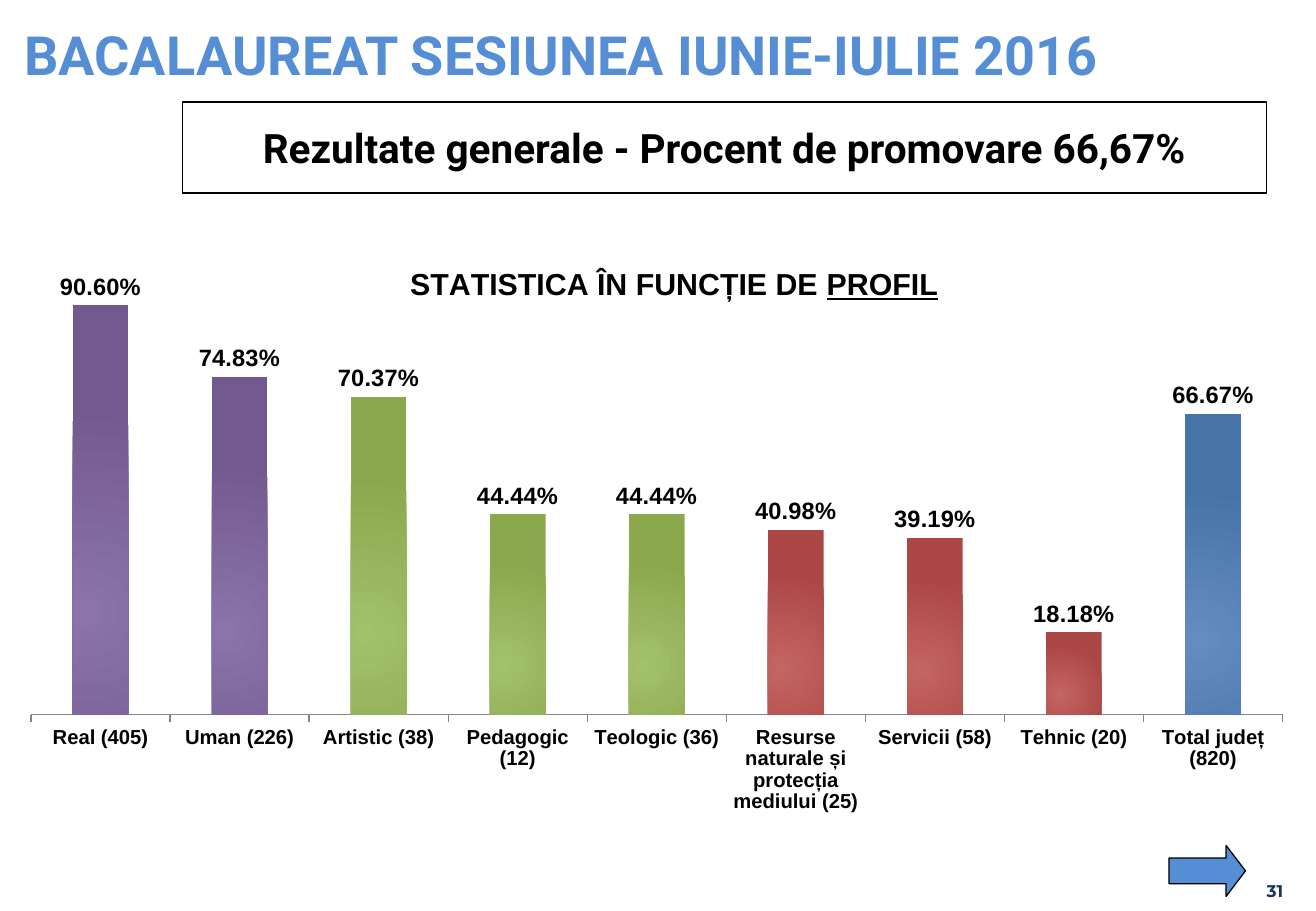
from lxml.etree import SubElement
from pptx import Presentation
from pptx.chart.data import CategoryChartData
from pptx.dml.color import RGBColor
from pptx.enum.chart import XL_CHART_TYPE, XL_LABEL_POSITION, XL_TICK_MARK
from pptx.enum.shapes import MSO_SHAPE
from pptx.enum.text import MSO_ANCHOR, MSO_AUTO_SIZE, PP_ALIGN
from pptx.oxml import parse_xml
from pptx.oxml.ns import nsdecls, qn
from pptx.util import Inches, Pt

TITLE = "BACALAUREAT SESIUNEA IUNIE-IULIE 2016"
BANNER = "Rezultate generale - Procent de promovare 66,67%"
HEADING = ("STATISTICA ÎN FUNCȚIE DE ", "PROFIL")
PAGE = "31"
# profile, pass rate, colour group
RATES = [
    ("Real (405)", 0.906, "purple"),
    ("Uman (226)", 0.7483, "purple"),
    ("Artistic (38)", 0.7037, "green"),
    ("Pedagogic (12)", 0.4444, "green"),
    ("Teologic (36)", 0.4444, "green"),
    ("Resurse naturale și protecția mediului (25)", 0.4098, "red"),
    ("Servicii (58)", 0.3919, "red"),
    ("Tehnic (20)", 0.1818, "red"),
    ("Total județ (820)", 0.6667, "blue"),
]
SHADES = {
    "purple": ("8B74A9", "725990"),
    "green": ("A3C06B", "8BA84D"),
    "red": ("C56562", "AB4744"),
    "blue": ("648CC2", "4673A8"),
}
COLORS = {"sky": "558ED5", "navy": "17365C", "black": "000000",
          "gray": "868686", "bar": "4F81BD"}


def rgb(name):
    return RGBColor.from_string(COLORS[name])


def box(left, top, width, height):
    return [Inches(n) for n in (left, top, width, height)]


def style(font, size, color="black", name="Arial"):
    font.size, font.name, font.bold = Pt(size), name, True
    font.color.rgb = rgb(color)


def write(shape, text, size, color, name, align, anchor, inset):
    frame = shape.text_frame
    frame.text = text
    frame.vertical_anchor = anchor
    frame.margin_left = frame.margin_right = Inches(inset)
    frame.margin_top = frame.margin_bottom = Inches(0.05 if inset else 0)
    para = frame.paragraphs[0]
    para.alignment = align
    style(para.runs[0].font, size, color, name)
    return frame


def place(parent, tag, **parts):
    """Add a manual chart layout at the given fractions."""
    old = parent.find(qn("c:layout"))
    if old is not None:
        parent.remove(old)
    layout = parse_xml(f"<c:layout {nsdecls('c')}/>")
    manual = SubElement(layout, qn("c:manualLayout"))
    if tag == "inner":
        SubElement(manual, qn("c:layoutTarget")).set("val", tag)
    for key in ("xMode", "yMode"):
        SubElement(manual, qn(f"c:{key}")).set("val", "edge")
    for key, part in parts.items():
        SubElement(manual, qn(f"c:{key}")).set("val", str(part))
    return layout


def add_rates(slide):
    data = CategoryChartData(number_format="0.00%")
    data.categories = [row[0] for row in RATES]
    data.add_series("Series 1", [row[1] for row in RATES])
    chart = slide.shapes.add_chart(
        XL_CHART_TYPE.COLUMN_CLUSTERED, *box(0.25, 1.83, 10.31, 5.42), data).chart
    style(chart.font, 12)
    chart.has_legend = False

    chart.has_title = True
    para = chart.chart_title.text_frame.paragraphs[0]
    for text in HEADING:
        run = para.add_run()
        run.text = text
        style(run.font, 18)
    run.font.underline = True
    chart.chart_title.include_in_layout = True
    title = chart.chart_title._element
    title.find(qn("c:tx")).addnext(place(title, "title", x=0.3, y=0.06))
    title.find(qn("c:overlay")).set("val", "1")

    axis = chart.value_axis
    axis.minimum_scale, axis.maximum_scale = 0, 1
    axis.has_major_gridlines = False
    axis.visible = False
    axis = chart.category_axis
    axis.major_tick_mark = XL_TICK_MARK.OUTSIDE
    axis.format.line.color.rgb = rgb("gray")
    style(axis.tick_labels.font, 12)

    plot = chart.plots[0]
    plot.gap_width = 150
    plot.vary_by_categories = False
    plot.has_data_labels = True
    labels = plot.data_labels
    labels.show_value = True
    labels.number_format, labels.number_format_is_linked = "0.00%", False
    labels.position = XL_LABEL_POSITION.OUTSIDE_END
    style(labels.font, 14)

    bars = plot.series[0]
    bars.format.fill.solid()
    bars.format.fill.fore_color.rgb = rgb("bar")
    for i, row in enumerate(RATES):
        fill = bars.points[i].format.fill
        fill.gradient()
        for stop, shade in zip(fill.gradient_stops, SHADES[row[2]]):
            stop.color.rgb = RGBColor.from_string(shade)
    space = chart._chartSpace
    for line in list(space.iter(qn("a:lin"))):
        line.getparent().replace(line, parse_xml(
            f'<a:path {nsdecls("a")} path="circle"><a:fillToRect '
            'l="50000" t="100000" r="100000" b="50000"/></a:path>'))
    area = space.find(".//" + qn("c:plotArea"))
    area.insert(0, place(area, "inner", x=0, y=0.062, w=1, h=0.686))


def add_shape(slide, kind, spot, fill=None):
    shape = slide.shapes.add_shape(kind, *box(*spot))
    shape.shadow.inherit = False
    if fill:
        shape.fill.solid()
        shape.fill.fore_color.rgb = rgb(fill)
    else:
        shape.fill.background()
    shape.line.color.rgb = rgb("black")
    shape.line.width = Pt(0.75)
    return shape


def main():
    deck = Presentation()
    deck.slide_width, deck.slide_height = Inches(10.83), Inches(7.5)
    slide = deck.slides.add_slide(deck.slide_layouts[5])
    add_rates(slide)

    page = slide.shapes.add_textbox(*box(9.66, 7.02, 0.9, 0.4))
    frame = write(page, PAGE, 10, "navy", "Montserrat",
                  PP_ALIGN.RIGHT, MSO_ANCHOR.BOTTOM, 0)
    frame.word_wrap = True

    title = slide.shapes.title
    title.left, title.top, title.width, title.height = box(0.1, 0.13, 10.15, 0.63)
    frame = write(title, TITLE, 32, "sky", "Roboto",
                  PP_ALIGN.LEFT, MSO_ANCHOR.TOP, 0.1)
    frame.word_wrap = False
    frame.auto_size = MSO_AUTO_SIZE.SHAPE_TO_FIT_TEXT

    banner = add_shape(slide, MSO_SHAPE.RECTANGLE, (1.5, 0.84, 8.92, 0.75))
    write(banner, BANNER, 24, "black", "Roboto",
          PP_ALIGN.CENTER, MSO_ANCHOR.MIDDLE, 0.05)

    arrow = add_shape(slide, MSO_SHAPE.RIGHT_ARROW, (9.62, 6.96, 0.63, 0.42), "sky")
    arrow.adjustments[1] = 0.38
    deck.save("out.pptx")


if __name__ == "__main__":
    main()
